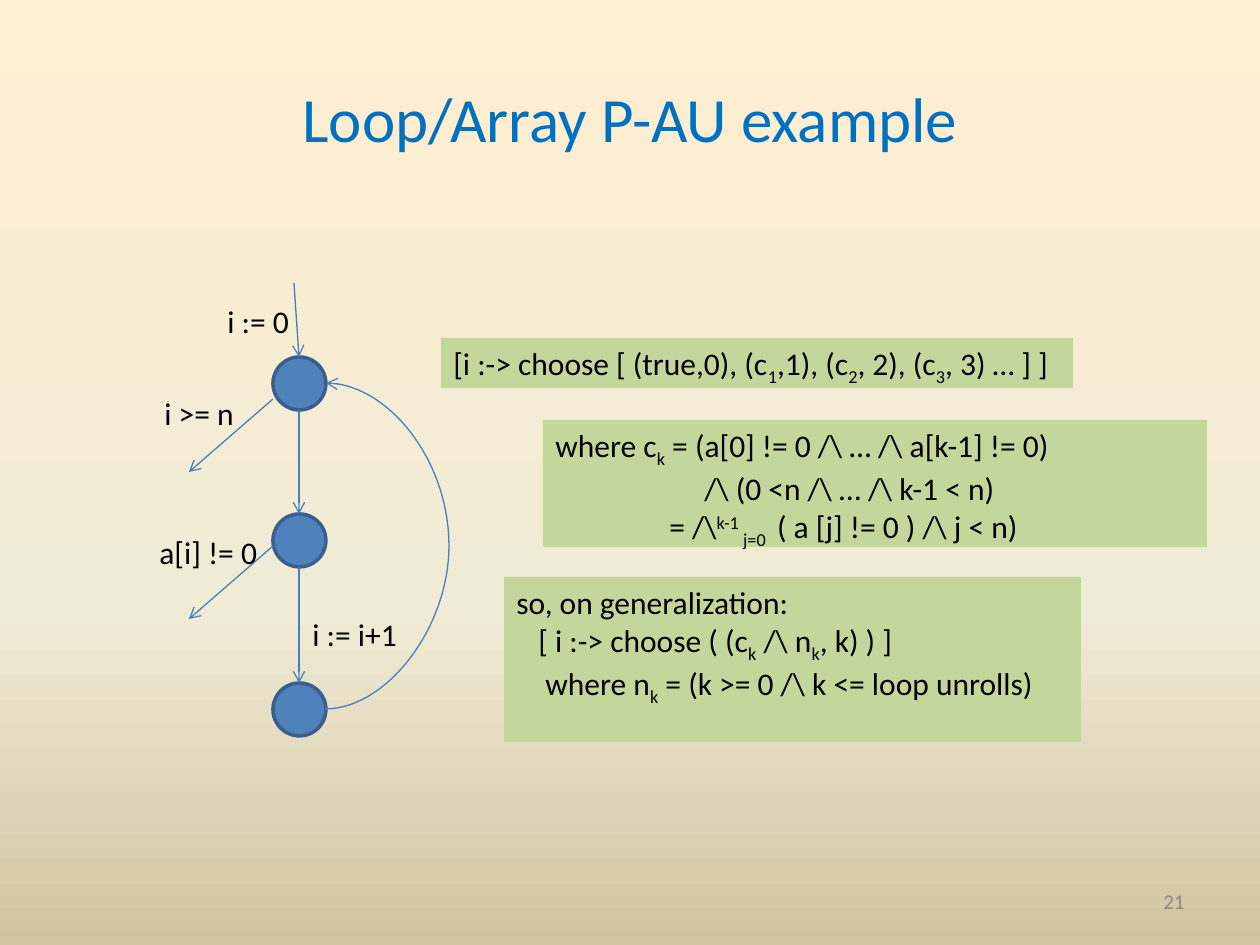
"""Build the loop and array example slide: a flow graph beside its formulas."""
from copy import deepcopy

from pptx import Presentation
from pptx import util as u
from pptx.dml.color import RGBColor
from pptx.enum import shapes, text
from pptx.oxml import parse_xml
from pptx.oxml.ns import nsdecls, qn

PX = 914400 // 126
FONT = "Calibri"
BLACK = RGBColor(0, 0, 0)
TITLE_BLUE = RGBColor(0x00, 0x70, 0xC0)
NODE_BLUE = RGBColor(0x4F, 0x81, 0xBD)
NODE_EDGE = RGBColor(0x3A, 0x5F, 0x8C)
ARROW_BLUE = RGBColor(0x4B, 0x7E, 0xBC)
GREEN = RGBColor(0xC3, 0xD6, 0x9B)
GREY = RGBColor(0x8C, 0x8C, 0x8C)
BACKGROUND = [
    (0, RGBColor(0xFF, 0xEF, 0xD1)),
    (0.65, RGBColor(0xF0, 0xEB, 0xD5)),
    (1, RGBColor(0xD1, 0xC3, 0x9F)),
]

SUB, SUP = -25000, 30000
TITLE = ((63, 38, 1134, 158), "Loop/Array P-AU example")
PAGE = ((903, 876, 294, 50), "21")
LABELS = [
    ((215, 296, 88, 50), "i := 0"),
    ((152, 388, 96, 50), "i >= n"),
    ((147, 527, 125, 50), "a[i] != 0"),
    ((300, 609, 111, 50), "i := i+1"),
]
# Each line is (indent, runs); a run is a string or (string, baseline).
FORMULAS = [
    ((441, 338, 632, 50), [
        (0, ["[i :-> choose [ (true,0), (c", ("1", SUB), ",1), (c", ("2", SUB),
             ", 2), (c", ("3", SUB), ", 3) … ] ]"]),
    ]),
    ((543, 420, 664, 127), [
        (0, ["where c", ("k", SUB), " = (a[0] != 0 /\\ … /\\ a[k-1] != 0)"]),
        (149, ["/\\ (0 <n /\\ … /\\ k-1 < n)"]),
        (114, ["= /\\", ("k-1", SUP), (" j=0 ", SUB), " ( a [j] != 0 ) /\\ j < n)"]),
    ]),
    ((504, 577, 577, 165), [
        (0, ["so, on generalization:"]),
        (22, ["[ i :-> choose ( (c", ("k", SUB), " /\\ n", ("k", SUB), ", k) ) ]"]),
        (29, ["where n", ("k", SUB), " = (k >= 0 /\\ k <= loop unrolls)"]),
    ]),
]
NODE_X, NODE_SIZE, NODE_TOPS = 273, 53, (357, 514, 683)
EXITS = [((273, 399), (189, 472)), ((273, 546), (189, 619))]
ENTRY = ((294, 283), (299, 357))
LOOP_RIGHT = 450


def px(values):
    return [v * PX for v in values]


def style(target, **values):
    for name, value in values.items():
        setattr(target, name, value)


def write(sp, lines, size=18, color=BLACK, align=text.PP_ALIGN.LEFT,
          anchor=text.MSO_ANCHOR.TOP, wrap=True):
    tf = sp.text_frame
    style(tf, word_wrap=wrap, vertical_anchor=anchor)
    for i, (indent, runs) in enumerate(lines):
        p = tf.add_paragraph() if i else tf.paragraphs[0]
        p.alignment = align
        if indent:
            p._p.get_or_add_pPr().set("marL", str(indent * PX))
        for run in runs:
            content, baseline = (run, 0) if isinstance(run, str) else run
            r = p.add_run()
            r.text = content
            style(r.font, name=FONT, size=u.Pt(size))
            r.font.color.rgb = color
            if baseline:
                r._r.get_or_add_rPr().set("baseline", str(baseline))


def add_label(s, box, content, **fmt):
    write(s.shapes.add_textbox(*px(box)), [(0, [content])], **fmt)


def add_filled(s, kind, box, fill):
    sp = s.shapes.add_shape(kind, *px(box))
    sp.shadow.inherit = False
    sp.fill.solid()
    sp.fill.fore_color.rgb = fill
    sp.line.fill.background()
    return sp


def add_arrow(s, start, end, kind=shapes.MSO_CONNECTOR.STRAIGHT):
    sp = s.shapes.add_connector(kind, *px(start + end))
    sp.line.width = u.Pt(0.75)
    sp.line.color.rgb = ARROW_BLUE
    sp.line._get_or_add_ln().append(parse_xml(f'<a:tailEnd {nsdecls("a")} type="arrow"/>'))
    sp._element.spPr.append(parse_xml(f'<a:effectLst {nsdecls("a")}/>'))
    return sp


def add_loop(s, start, end):
    sp = add_arrow(s, start, end, shapes.MSO_CONNECTOR.CURVE)
    bend = (LOOP_RIGHT - start[0]) * 100000 // (end[0] - start[0])
    geom = sp._element.spPr.find(qn("a:prstGeom"))
    for old in list(geom):
        geom.remove(old)
    geom.append(parse_xml(
        f'<a:avLst {nsdecls("a")}><a:gd name="adj1" fmla="val {bend}"/></a:avLst>'))


def set_background(s):
    fill = s.background.fill
    fill.gradient()
    fill.gradient_angle = 270
    stops = s.element.find(".//" + qn("a:gsLst"))
    stops.append(deepcopy(stops[-1]))
    for stop, (position, color) in zip(fill.gradient_stops, BACKGROUND):
        stop.position = position
        stop.color.rgb = color


def main():
    prs = Presentation()
    style(prs, slide_width=1260 * PX, slide_height=945 * PX)
    s = prs.slides.add_slide(prs.slide_layouts[6])
    set_background(s)
    middle = text.MSO_ANCHOR.MIDDLE
    add_label(s, *TITLE, size=36, color=TITLE_BLUE, align=text.PP_ALIGN.CENTER, anchor=middle)

    for top in NODE_TOPS:
        box = (NODE_X, top, NODE_SIZE, NODE_SIZE)
        sp = add_filled(s, shapes.MSO_SHAPE.OVAL, box, NODE_BLUE)
        sp.line.color.rgb = NODE_EDGE
        sp.line.width = u.Pt(2)

    half = NODE_SIZE // 2
    center, right = NODE_X + half, NODE_X + NODE_SIZE
    steps = [((center, a + NODE_SIZE), (center, b)) for a, b in zip(NODE_TOPS, NODE_TOPS[1:])]
    for start, end in [ENTRY] + steps + EXITS:
        add_arrow(s, start, end)
    add_loop(s, (right - 1, NODE_TOPS[-1] + half), (right, NODE_TOPS[0] + half))

    for box, lines in FORMULAS:
        write(add_filled(s, shapes.MSO_SHAPE.RECTANGLE, box, GREEN), lines)
    for box, content in LABELS:
        add_label(s, box, content, wrap=False)
    add_label(s, *PAGE, size=12, color=GREY, align=text.PP_ALIGN.RIGHT, anchor=middle)
    prs.save("out.pptx")


if __name__ == "__main__":
    main()
